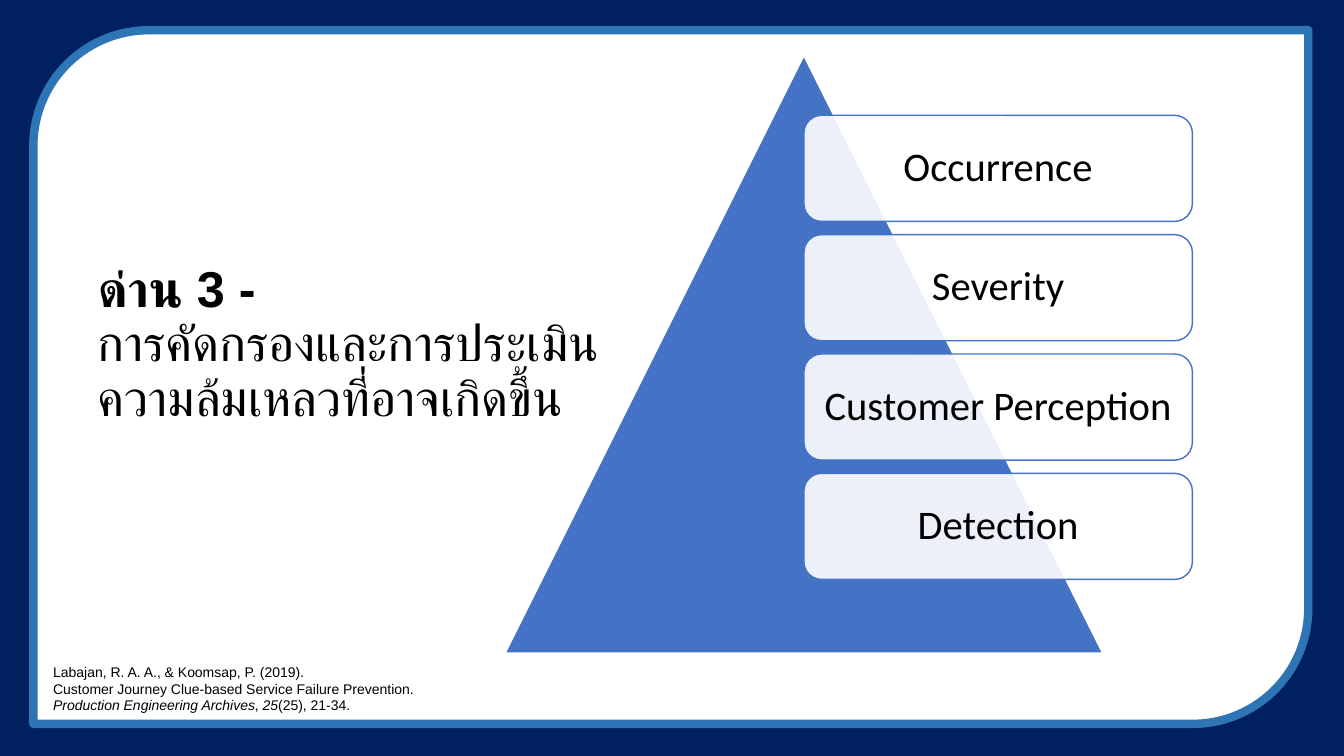
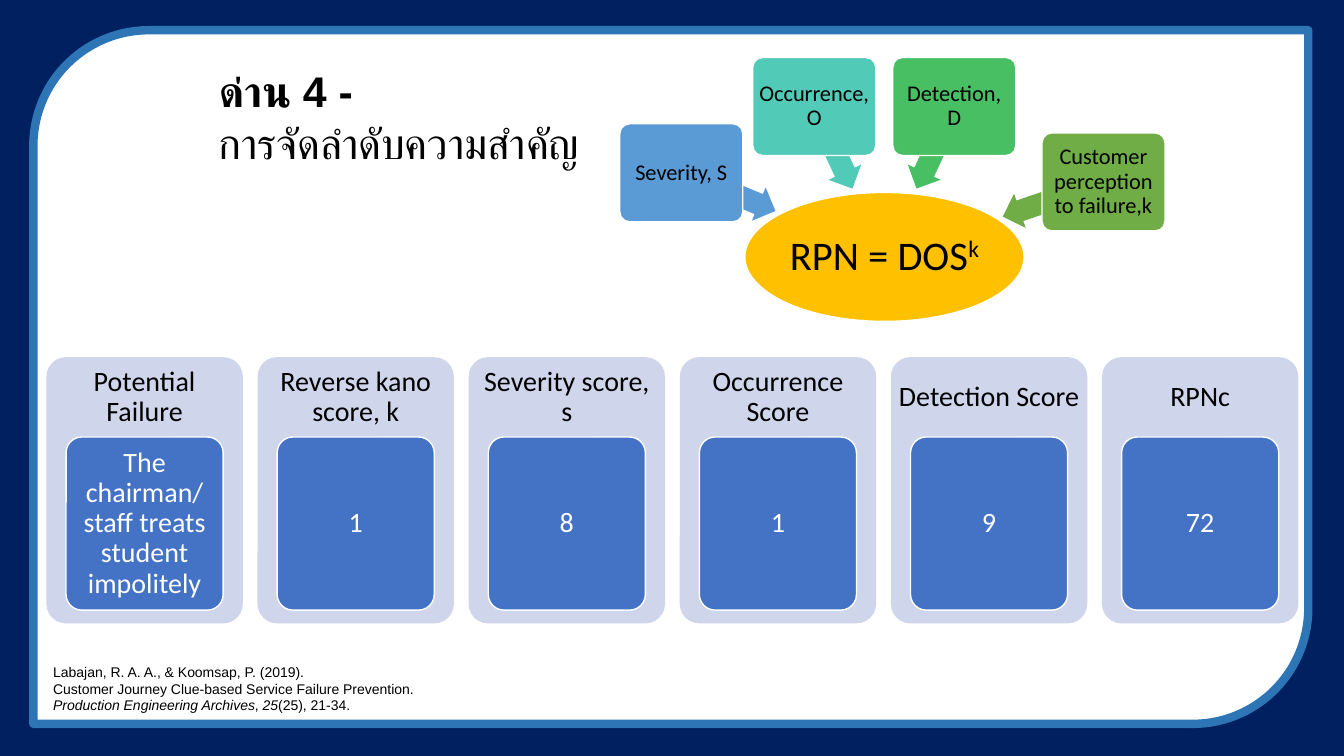
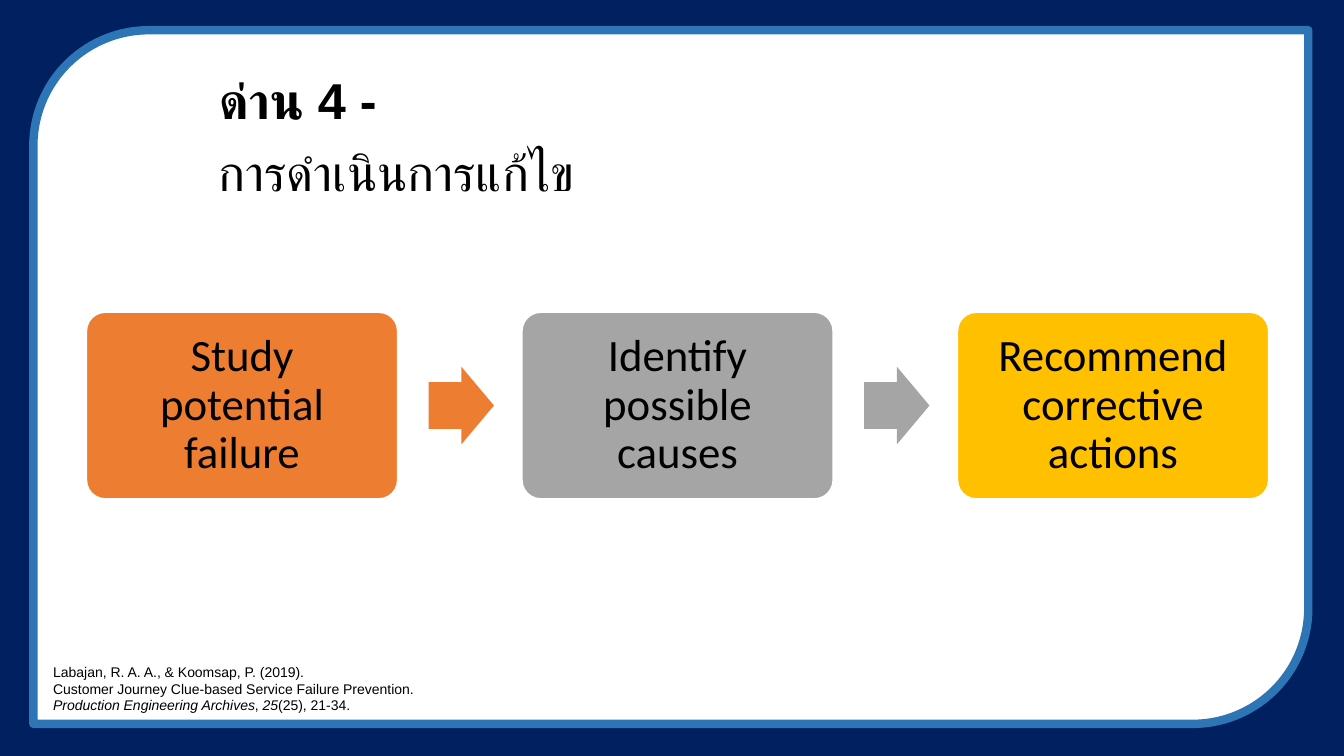
from lxml.etree import SubElement
from pptx import Presentation
from pptx.dml.color import RGBColor
from pptx.enum.shapes import MSO_SHAPE
from pptx.enum.text import MSO_ANCHOR, MSO_AUTO_SIZE, PP_ALIGN
from pptx.oxml.ns import qn
from pptx.util import Cm, Pt

NAVY = RGBColor(0x00, 0x20, 0x60)
FRAME_BLUE = RGBColor(0x2E, 0x75, 0xB6)
WHITE = RGBColor(0xFF, 0xFF, 0xFF)
BLACK = RGBColor(0x00, 0x00, 0x00)
BLUE = RGBColor(0x44, 0x72, 0xC4)
PALE_BLUE = RGBColor(0xCF, 0xD5, 0xEA)
SKY = RGBColor(0x5B, 0x9B, 0xD5)
TEAL = RGBColor(0x52, 0xCA, 0xB8)
EMERALD = RGBColor(0x49, 0xBF, 0x64)
GREEN = RGBColor(0x70, 0xAD, 0x47)
GOLD = RGBColor(0xFF, 0xC0, 0x00)
ORANGE = RGBColor(0xED, 0x7D, 0x31)
GRAY = RGBColor(0xA5, 0xA5, 0xA5)

SLIDE_W, SLIDE_H = 33.87, 19.05
ARROW_ADJ = (0.6, 0.5)
CITATION = [
    "Labajan, R. A. A., & Koomsap, P. (2019).",
    "Customer Journey Clue-based Service Failure Prevention.",
    [("Production Engineering Archives", {"italic": True}), (", ", {}),
     ("25", {"italic": True}), ("(25), 21-34.", {})],
]


def write(tf, paragraphs, size=20, font="Calibri", color=BLACK, align=PP_ALIGN.CENTER,
          anchor=MSO_ANCHOR.MIDDLE, spacing=0.9, margins=None):
    """Fill a text frame with paragraphs, each a string or a list of (text, format) runs."""
    tf.word_wrap = True
    tf.auto_size = MSO_AUTO_SIZE.NONE
    tf.vertical_anchor = anchor
    if margins:
        tf.margin_left, tf.margin_top, tf.margin_right, tf.margin_bottom = map(Cm, margins)
    for i, runs in enumerate(paragraphs):
        p = tf.add_paragraph() if i else tf.paragraphs[0]
        p.alignment = align
        p.line_spacing = spacing
        for text, fmt in [(runs, {})] if isinstance(runs, str) else runs:
            r = p.add_run()
            r.text = text
            r.font.name = font
            r.font.size = Pt(size)
            r.font.color.rgb = color
            r.font.bold = fmt.get("bold", False)
            r.font.italic = fmt.get("italic", False)
            if "baseline" in fmt:
                r._r.get_or_add_rPr().set("baseline", str(fmt["baseline"]))


def add_box(s, kind, x, y, w, h, fill, line=None, width=1, adj=(), rotation=0, opacity=None):
    """Add a preset shape measured in centimetres."""
    sp = s.shapes.add_shape(kind, Cm(x), Cm(y), Cm(w), Cm(h))
    sp.shadow.inherit = False
    sp.rotation = rotation
    for i, value in enumerate(adj):
        sp.adjustments[i] = value
    sp.fill.solid()
    sp.fill.fore_color.rgb = fill
    if opacity is not None:
        clr = sp.element.spPr.find(qn("a:solidFill")).find(qn("a:srgbClr"))
        SubElement(clr, qn("a:alpha")).set("val", str(opacity * 1000))
    if line is None:
        sp.line.fill.background()
    else:
        sp.line.color.rgb = line
        sp.line.width = Pt(width)
    return sp


def add_round_box(s, x, y, w, h, fill, line=WHITE):
    """Add a rectangle with small round corners."""
    return add_box(s, MSO_SHAPE.ROUNDED_RECTANGLE, x, y, w, h, fill, line, adj=(0.1,))


def set_up_master(prs, s):
    """Draw the navy border and the framed panel, then move them to the master."""
    border = add_box(s, MSO_SHAPE.RECTANGLE, 0, 0, SLIDE_W, SLIDE_H, NAVY)
    panel = add_box(s, MSO_SHAPE.ROUND_2_DIAG_RECTANGLE, 0.84, 0.76, 32.13, 17.48, WHITE,
                    FRAME_BLUE, width=6, rotation=180)
    tree = prs.slide_master.shapes.element
    for i, sp in enumerate((border, panel)):
        tree.insert(2 + i, sp.element)


def add_heading(s, x, y, w, h, gate, topic, size=36, spacing=1.0):
    """Place the title with a bold gate number above its topic."""
    title = s.shapes.title
    title.left, title.top, title.width, title.height = map(Cm, (x, y, w, h))
    write(title.text_frame, [[(gate, {"bold": True})], topic], size=size, font="Arial",
          align=PP_ALIGN.LEFT, spacing=spacing)


def add_citation(s):
    """Place the source reference at the bottom left."""
    sp = s.shapes.add_textbox(Cm(1.09), Cm(16.59), Cm(9.78), Cm(1.55))
    write(sp.text_frame, CITATION, size=10, font="Arial", align=PP_ALIGN.LEFT,
          anchor=MSO_ANCHOR.TOP, spacing=1.0)


def add_pyramid(s, x, y, size, labels):
    """Draw a triangle with a stack of translucent label bars on its right half."""
    add_box(s, MSO_SHAPE.ISOSCELES_TRIANGLE, x, y, size, size, BLUE, WHITE)
    bar_h = size * 0.1775
    for i, label in enumerate(labels):
        sp = add_box(s, MSO_SHAPE.ROUNDED_RECTANGLE, x + size / 2, y + size * 0.1 + i * bar_h * 1.125,
                     size * 0.65, bar_h, WHITE, BLUE, opacity=90)
        write(sp.text_frame, [label], size=29, margins=(0.3,) * 4)


def add_formula(s, x, y):
    """Draw the formula ellipse with the four factors pointing at it."""
    sp = add_box(s, MSO_SHAPE.OVAL, x + 3.15, y + 3.4, 7.04, 3.25, GOLD, WHITE)
    write(sp.text_frame, [[("RPN = DOS", {}), ("k", {"baseline": 30000})]], size=29,
          margins=(0.05,) * 4)
    factors = [
        ("Severity, S", SKY, (0, 1.67), (1.45, 2.92, 2.57, 202.5)),
        ("Occurrence, O", TEAL, (3.35, 0), (4.22, 1.8, 2.31, 245)),
        ("Detection, D", EMERALD, (6.88, 0), (6.81, 1.8, 2.31, 295)),
        ("Customer perception to failure,k", GREEN, (10.64, 1.9), (9.58, 3.12, 2.69, 341.2)),
    ]
    for label, color, (dx, dy), (ax, ay, length, angle) in factors:
        add_box(s, MSO_SHAPE.LEFT_ARROW, x + ax, y + ay, length, 0.91, color,
                adj=ARROW_ADJ, rotation=angle)
        sp = add_round_box(s, x + dx, y + dy, 3.1, 2.47, color)
        write(sp.text_frame, [label], size=16, margins=(0.08,) * 4)


def add_score_cards(s, x, y, w, h, cards):
    """Spread cards evenly over the box, each with a heading and an inner value tile."""
    card_w = w / (len(cards) + 0.075 * (len(cards) - 1))
    for i, (heading, value) in enumerate(cards):
        left = x + i * card_w * 1.075
        sp = add_round_box(s, left, y, card_w, h, PALE_BLUE, line=None)
        write(sp.text_frame, [heading], margins=(0.06, 0.06, 0.06, h * 0.7 + 0.06))
        sp = add_round_box(s, left + card_w * 0.1, y + h * 0.3, card_w * 0.8, h * 0.65, BLUE)
        write(sp.text_frame, [value], color=WHITE, margins=(0.15, 0.1, 0.15, 0.1))


def add_process(s, x, y, w, h, steps):
    """Spread step boxes evenly over the box, joined by block arrows."""
    step_w = w / (len(steps) + 0.4 * (len(steps) - 1))
    arrow_w, arrow_h = step_w * 0.21, step_w * 0.25
    for i, (label, color) in enumerate(steps):
        left = x + i * step_w * 1.4
        sp = add_round_box(s, left, y, step_w, h, color)
        write(sp.text_frame, [label], size=32, margins=(0.33,) * 4)
        if i < len(steps) - 1:
            add_box(s, MSO_SHAPE.RIGHT_ARROW, left + step_w * 1.1, y + (h - arrow_h) / 2,
                    arrow_w, arrow_h, color, adj=ARROW_ADJ)


def main():
    """Build and save the three slides."""
    prs = Presentation()
    prs.slide_width, prs.slide_height = Cm(SLIDE_W), Cm(SLIDE_H)
    screening, ranking, action = [prs.slides.add_slide(prs.slide_layouts[5]) for _ in range(3)]
    set_up_master(prs, screening)

    add_pyramid(screening, 12.73, 1.4, 15.06,
                ["Occurrence", "Severity", "Customer Perception", "Detection"])
    add_heading(screening, 2.21, 4.75, 14.73, 7.92, "ด่าน 3 -",
                "การคัดกรองและการประเมินความล้มเหลวที่อาจเกิดขึ้น", spacing=0.9)

    add_formula(ranking, 15.62, 1.45)
    add_score_cards(ranking, 1.17, 9, 31.55, 6.71, [
        ("Potential Failure", "The chairman/ staff treats student impolitely"),
        ("Reverse kano score, k", "1"),
        ("Severity score, s", "8"),
        ("Occurrence Score", "1"),
        ("Detection Score", "9"),
        ("RPNc", "72"),
    ])
    add_heading(ranking, 5.26, 0.76, 10.39, 4.34, "ด่าน 4 -", "การจัดลำดับความสำคัญ", size=30.6)

    add_process(action, 2.18, 7.87, 29.79, 4.7, [
        ("Study potential failure", ORANGE),
        ("Identify possible causes", GRAY),
        ("Recommend corrective actions", GOLD),
    ])
    add_heading(action, 5.26, 0.76, 11.35, 5, "ด่าน 4 -", "การดำเนินการแก้ไข", spacing=1.2)

    for s in prs.slides:
        add_citation(s)
    prs.save("out.pptx")


if __name__ == "__main__":
    main()
